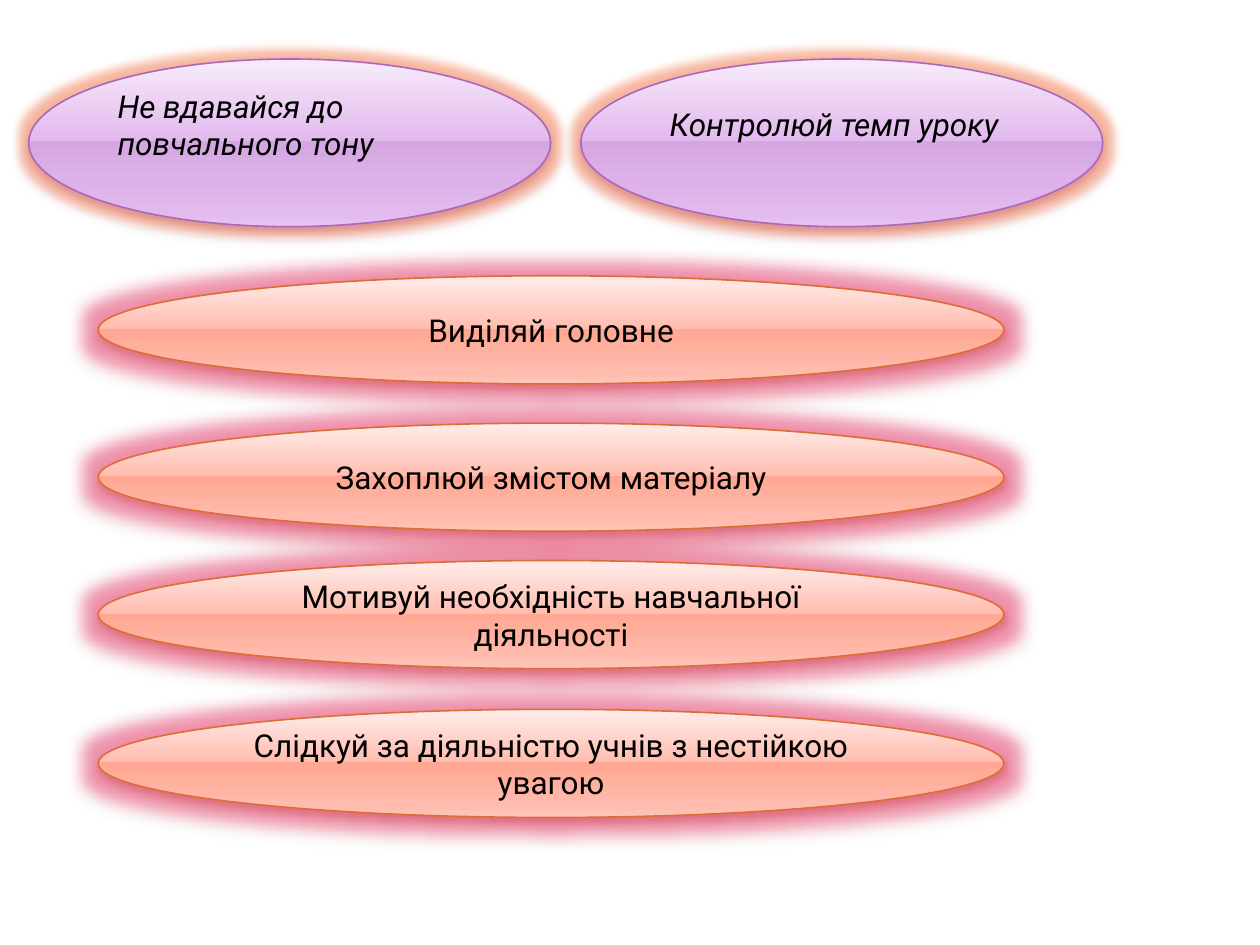
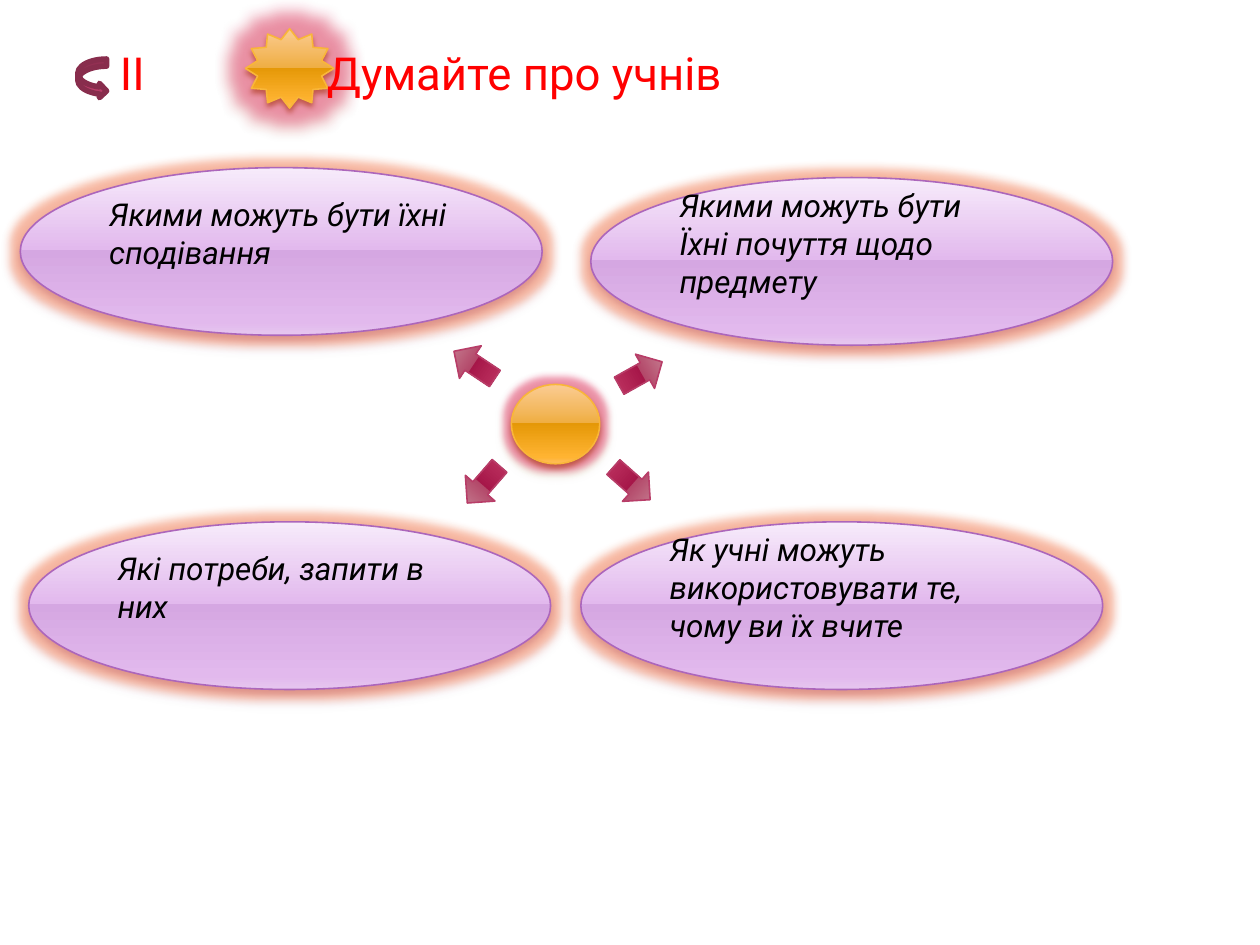
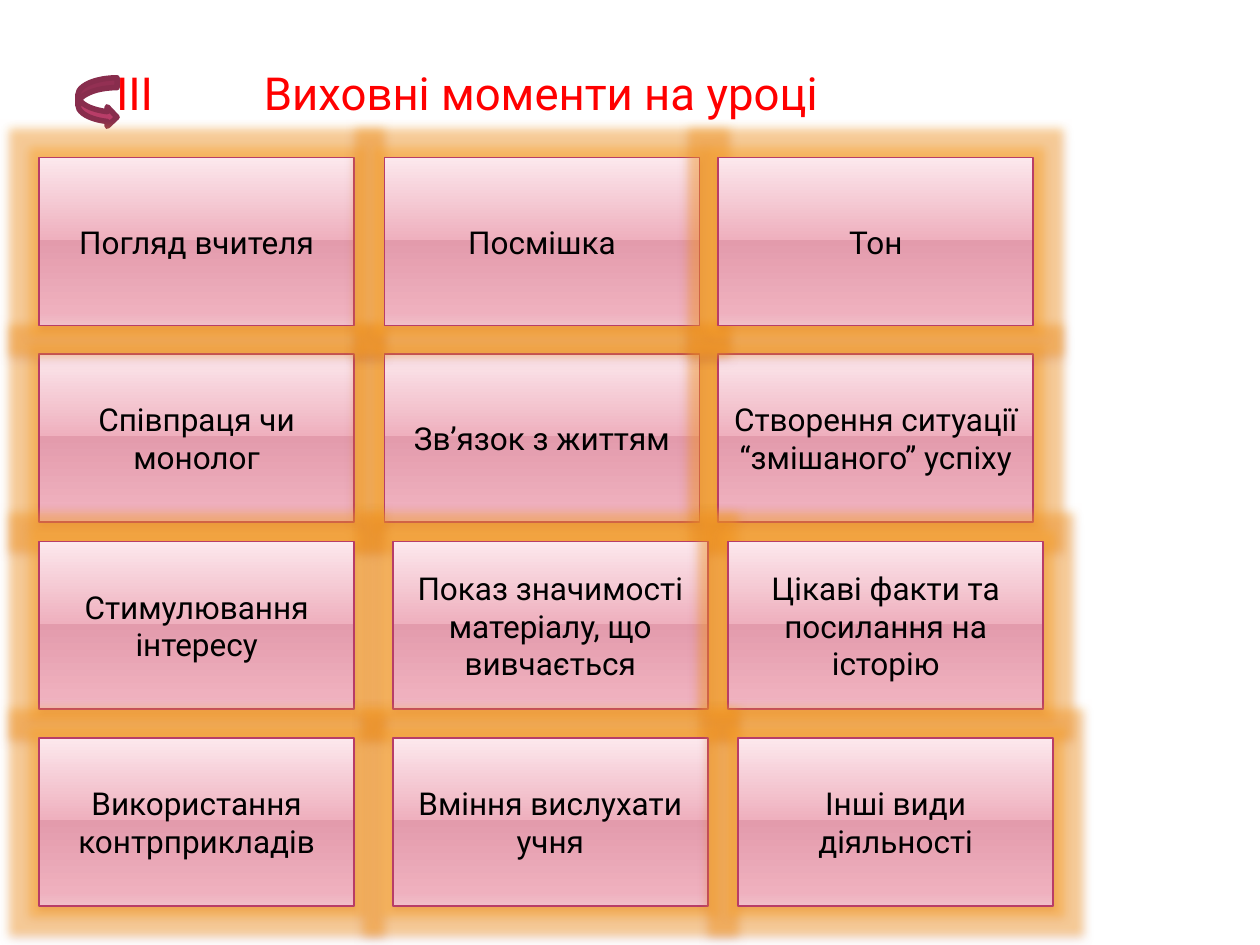
from dataclasses import dataclass

from lxml.etree import SubElement
from pptx import Presentation
from pptx.dml.color import RGBColor
from pptx.enum.shapes import MSO_SHAPE
from pptx.enum.text import MSO_ANCHOR, PP_ALIGN
from pptx.oxml.ns import qn
from pptx.shapes.autoshape import Shape
from pptx.slide import Slide
from pptx.util import Cm, Pt

FONT = "Roboto"
COLORS = {
    "text": "000000", "title": "FF0000", "hook": "B83D68", "hook_line": "882D4D",
    "plum": "AC66BB", "coral": "DE6C36", "gold": "F9B639", "rose": "B83D68",
    "plum_dark": "6E307B", "coral_dark": "9C3707", "gold_dark": "9A7023",
    "rose_dark": "7F1238",
    "glow_coral": "FF6A2A", "glow_rose": "E61055", "glow_gold": "FFA51E",
}
STOPS = (0, 49, 49, 92, 100)


@dataclass(frozen=True)
class Style:
    ramp: str
    line: str
    shade: str = ""
    depth: int = 38
    blur: float = 4
    glow: str = ""
    reach: float = 0


@dataclass(frozen=True)
class Box:
    left: float
    top: float
    width: float
    height: float


@dataclass(frozen=True)
class Row:
    top: float
    lefts: tuple[float, ...]
    words: tuple[str, ...]


# Glossy looks
PLUM = Style("F7EBFB E2B9ED D5A7E2 E2B9ED E6C6EF", "plum", "plum_dark",
             glow="glow_coral", reach=10)
CORAL = Style("FFEDEA FFBDAF FFA793 FFBDAF FFC8BC", "coral", "coral_dark",
              glow="glow_rose", reach=18)
PINK = Style("FCE8ED EFB0BE E39BAC EFB0BE F0BEC9", "rose", "rose_dark",
             glow="glow_gold", reach=11)
GOLD = "FBCC93 EFAE43 E59807 FFB432 FFBE5F"
SUN = Style(GOLD, "gold", "gold_dark", 83, 3.1, "glow_rose", 8)
STAR = Style(GOLD, "gold", "gold_dark", 83, 3.1, "glow_rose", 18)
WINE = Style("CE94A2 B34869 A61749 C13764 CA5D7C", "rose")


def paint(name: str) -> RGBColor:
    return RGBColor.from_string(COLORS[name])


def add_tint(node, name: str, alpha: int) -> None:
    tint = SubElement(node, qn("a:srgbClr"), val=COLORS[name])
    SubElement(tint, qn("a:alpha"), val=str(alpha * 1000))


def add_form(slide: Slide, kind: MSO_SHAPE, box: Box) -> Shape:
    form = slide.shapes.add_shape(
        kind, Cm(box.left), Cm(box.top), Cm(box.width), Cm(box.height))
    form.shadow.inherit = False
    return form


def add_gloss(slide: Slide, kind: MSO_SHAPE, box: Box, style: Style) -> Shape:
    form = add_form(slide, kind, box)
    form.line.color.rgb = paint(style.line)
    form.line.width = Pt(0.9)
    # Five-stop gradient, light at the top
    form.fill.gradient()
    form.fill.gradient_angle = 270
    props = form.element.spPr
    stops = props.find(".//" + qn("a:gsLst"))
    stops.clear()
    for place, color in zip(STOPS, style.ramp.split()):
        stop = SubElement(stops, qn("a:gs"), pos=str(place * 1000))
        SubElement(stop, qn("a:srgbClr"), val=color)
    # Glow and shadow
    looks = props.find(qn("a:effectLst"))
    if style.glow:
        glow = SubElement(looks, qn("a:glow"), rad=str(Pt(style.reach)))
        add_tint(glow, style.glow, 40)
    if style.shade:
        shade = SubElement(looks, qn("a:outerShdw"), blurRad=str(Pt(style.blur)),
                           dist=str(Pt(2)), dir="5400000", rotWithShape="0")
        add_tint(shade, style.shade, style.depth)
    return form


def set_text(form: Shape, text: str, align: PP_ALIGN, size: float = 18,
             color: str = "text", slant: bool = False) -> None:
    frame = form.text_frame
    frame.word_wrap = True
    frame.text = text
    for para in frame.paragraphs:
        para.alignment = align
        for run in para.runs:
            run.font.name = FONT
            run.font.size = Pt(size)
            run.font.italic = slant
            run.font.color.rgb = paint(color)


def add_label(slide: Slide, kind: MSO_SHAPE, box: Box, style: Style, text: str) -> None:
    form = add_gloss(slide, kind, box, style)
    set_text(form, text, PP_ALIGN.CENTER)
    form.text_frame.vertical_anchor = MSO_ANCHOR.MIDDLE


def add_advice(slide: Slide, left: float, top: float, text: str) -> None:
    form = add_gloss(slide, MSO_SHAPE.OVAL, Box(left, top, 10.52, 3.38), PLUM)
    set_text(form, text, PP_ALIGN.LEFT, slant=True)
    form.text_frame.vertical_anchor = MSO_ANCHOR.MIDDLE
    form.text_frame.margin_bottom = Cm(0.87)


def add_title(slide: Slide, top: float, number: Box, title: Box, hook: Box,
              words: tuple[str, str]) -> None:
    for box, text in zip((number, title), words):
        form = slide.shapes.add_textbox(
            Cm(box.left), Cm(box.top), Cm(box.width), Cm(box.height))
        form.text_frame.margin_left = 0
        set_text(form, text, PP_ALIGN.LEFT, 26, "title")
    # Curved arrow beside the number
    mark = add_form(slide, MSO_SHAPE.CURVED_RIGHT_ARROW, hook)
    mark.fill.solid()
    mark.fill.fore_color.rgb = paint("hook")
    mark.line.color.rgb = paint("hook_line")
    mark.line.width = Pt(3.15)


def build_rules(slide: Slide) -> None:
    add_advice(slide, 11.71, 1.19, "Контролюй темп уроку")
    add_advice(slide, 0.58, 1.19, "Не вдавайся до повчального тону")
    rules = (
        (5.56, "Виділяй головне"),
        (8.53, "Захоплюй змістом матеріалу"),
        (11.3, "Мотивуй необхідність навчальної діяльності"),
        (14.3, "Слідкуй за діяльністю учнів з нестійкою увагою"),
    )
    for top, text in rules:
        add_label(slide, MSO_SHAPE.OVAL, Box(1.98, top, 18.26, 2.18), CORAL, text)


def build_pupils(slide: Slide) -> None:
    # Star stays behind the title
    add_gloss(slide, MSO_SHAPE.STAR_12_POINT, Box(4.95, 0.58, 1.78, 1.6), STAR)
    add_title(slide, 0.79, Box(2.42, 0.79, 1.5, 1.4), Box(6.59, 0.79, 14.8, 1.4),
              Box(1.57, 1.19, 0.58, 0.79), ("ІІ", "Думайте про учнів"))
    add_advice(slide, 11.71, 10.52, "Як учні можуть використовувати те, чому ви їх вчите")
    add_advice(slide, 0.41, 3.38, "Якими можуть бути їхні сподівання")
    add_advice(slide, 0.58, 10.52, "Які потреби, запити в них")
    add_advice(slide, 11.91, 3.58, "Якими можуть бути\nЇхні почуття щодо предмету")
    # Sun with four arrows
    add_gloss(slide, MSO_SHAPE.OVAL, Box(10.31, 7.75, 1.78, 1.6), SUN)
    rays = ((9.17, 6.86, 303.7), (12.34, 9.25, 131.5),
            (9.35, 9.27, 221), (12.52, 7.04, 60.8))
    for left, top, turn in rays:
        ray = add_gloss(slide, MSO_SHAPE.UP_ARROW, Box(left, top, 0.79, 0.99), WINE)
        ray.rotation = turn


def build_moments(slide: Slide) -> None:
    add_title(slide, 1.19, Box(2.34, 1.19, 1.5, 1.4), Box(5.32, 1.19, 16, 1.4),
              Box(1.57, 1.57, 0.79, 0.99), ("ІІІ", "Виховні моменти на уроці"))
    # Rows from back to front
    rows = (
        Row(7.14, (0.79, 7.75, 14.48),
            ("Співпраця чи монолог", "Зв’язок з життям",
             "Створення ситуації “змішаного” успіху")),
        Row(10.92, (0.79, 7.92, 14.68),
            ("Стимулювання інтересу", "Показ значимості матеріалу, що вивчається",
             "Цікаві факти та посилання на історію")),
        Row(14.88, (0.79, 7.92, 14.88),
            ("Використання контрприкладів", "Вміння вислухати учня",
             "Інші види діяльності")),
        Row(3.18, (0.79, 7.75, 14.48), ("Погляд вчителя", "Посмішка", "Тон")),
    )
    for row in rows:
        for left, text in zip(row.lefts, row.words):
            add_label(slide, MSO_SHAPE.RECTANGLE, Box(left, row.top, 6.35, 3.38),
                      PINK, text)


def main() -> None:
    deck = Presentation()
    deck.slide_width, deck.slide_height = Cm(25.4), Cm(19.05)
    for build in (build_rules, build_pupils, build_moments):
        build(deck.slides.add_slide(deck.slide_layouts[6]))
    deck.save("out.pptx")


if __name__ == "__main__":
    main()
